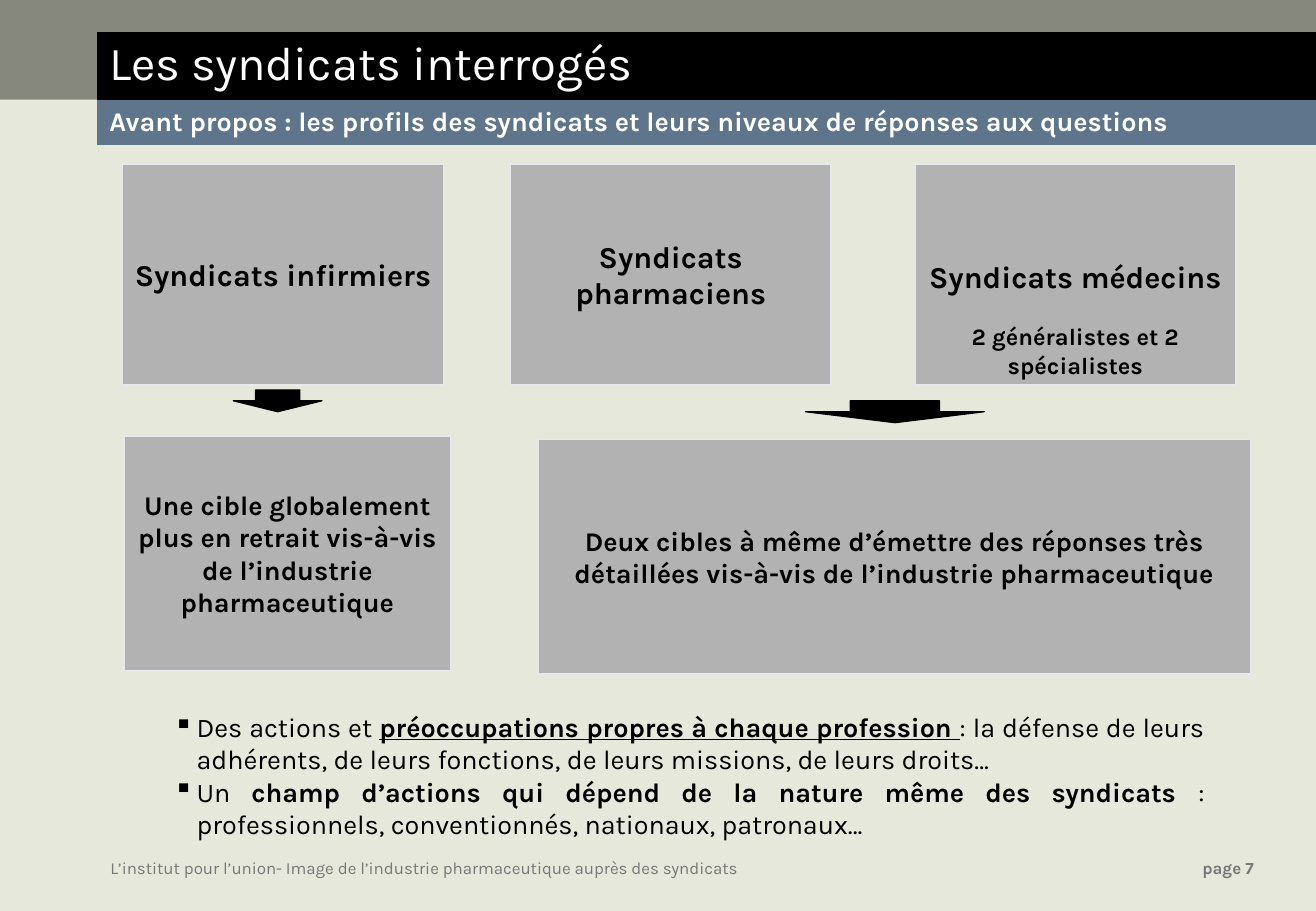
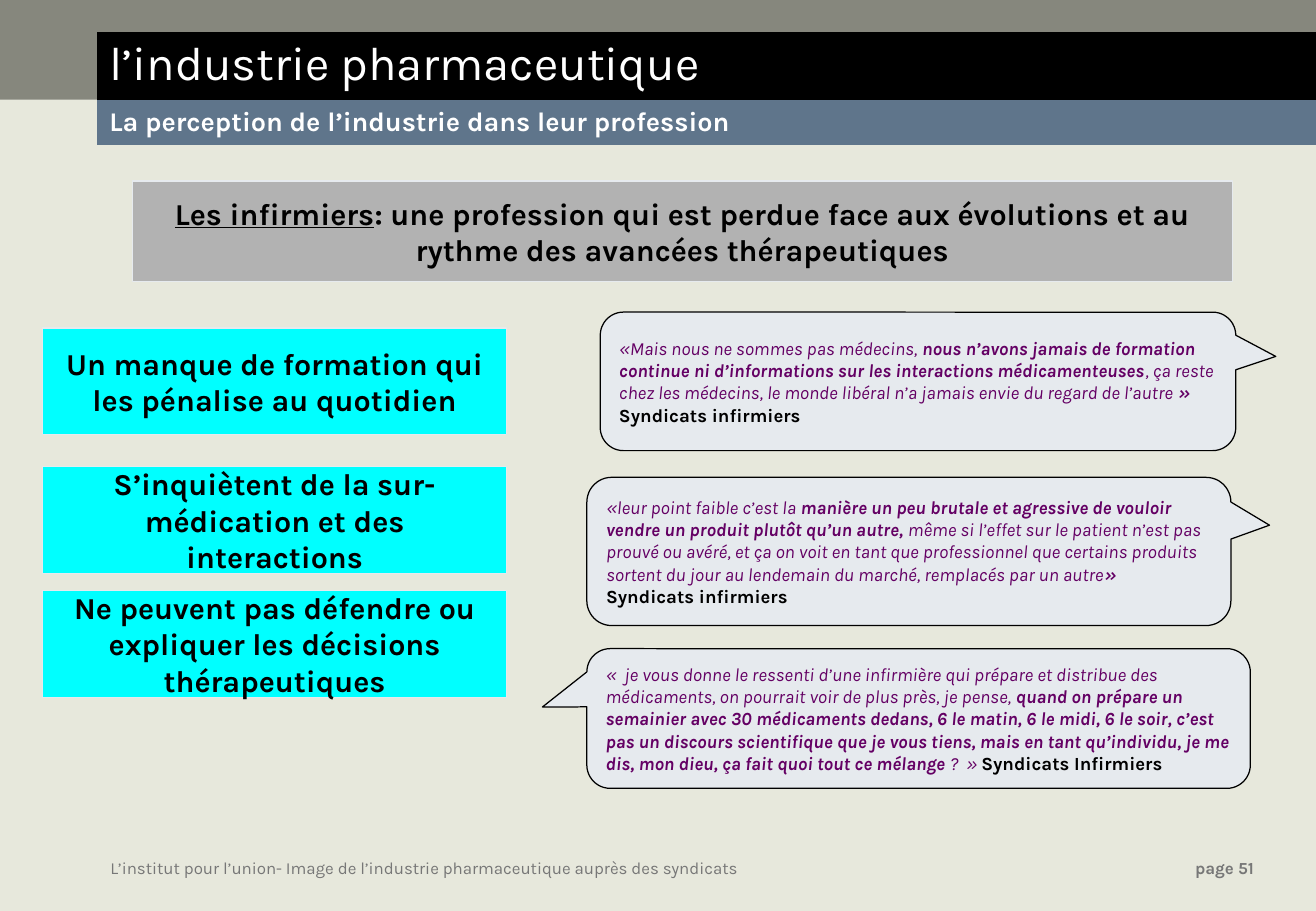
from lxml import etree
from pptx import Presentation
from pptx.dml.color import RGBColor
from pptx.enum.shapes import MSO_SHAPE
from pptx.enum.text import MSO_ANCHOR, PP_ALIGN
from pptx.oxml.ns import qn
from pptx.util import Inches, Pt

RECT, ARROW = MSO_SHAPE.RECTANGLE, MSO_SHAPE.DOWN_ARROW
BUBBLE = MSO_SHAPE.ROUNDED_RECTANGULAR_CALLOUT
LEFT, MID, JUST = PP_ALIGN.LEFT, PP_ALIGN.CENTER, PP_ALIGN.JUSTIFY
TOP, CENTER, BOTTOM = MSO_ANCHOR.TOP, MSO_ANCHOR.MIDDLE, MSO_ANCHOR.BOTTOM

FONT = "Karla"
PLAIN_TABLE = "{2D5ABB26-0587-4C30-8999-92F81FD0307C}"
COLORS = {
    "page": "E7E8DC", "band": "86877D", "black": "000000", "white": "FFFFFF",
    "blue": "5F758B", "gray": "B2B2B2", "pale": "E6EAEE", "cyan": "00FFFF",
    "plum": "640064", "note": "777777",
}
COLORS = {name: RGBColor.from_string(code) for name, code in COLORS.items()}
BOLD = {"bold": True}
UNDER = {"bold": True, "underline": True}
QUOTE = {"italic": True, "color": "plum"}
STRONG = {**QUOTE, "bold": True}


def write(frame, paras, size, color="black", align=LEFT, anchor=TOP):
    """Fill a frame with paragraphs, each a list of (text, format) runs."""
    frame.word_wrap = True
    frame.vertical_anchor = anchor
    for i, runs in enumerate(paras):
        para = frame.paragraphs[0] if i == 0 else frame.add_paragraph()
        para.alignment = align
        for text, look in runs:
            run = para.add_run()
            run.text = text
            look = {"name": FONT, "size": Pt(size), "color": color, **look}
            run.font.color.rgb = COLORS[look.pop("color")]
            for key, value in look.items():
                setattr(run.font, key, value)


def draw(slide, kind, box, fill, line=None, adjust=()):
    shape = slide.shapes.add_shape(kind, *map(Inches, box))
    shape.shadow.inherit = False
    shape.fill.solid()
    shape.fill.fore_color.rgb = COLORS[fill]
    if line:
        shape.line.color.rgb = COLORS[line]
        shape.line.width = Pt(0.75)
    else:
        shape.line.fill.background()
    for i, value in enumerate(adjust):
        shape.adjustments[i] = value
    return shape


deck = Presentation()
deck.slide_width, deck.slide_height = Inches(10.83), Inches(7.5)

# Shared frame: background, band, title table and footer
heads = [
    ("Les syndicats interrogés",
     "Avant propos : les profils des syndicats et leurs niveaux de réponses aux questions", 7),
    ("l’industrie pharmaceutique",
     "La perception de l’industrie dans leur profession", 51),
]
slides = []
for title, topic, number in heads:
    slide = deck.slides.add_slide(deck.slide_layouts[6])
    slides.append(slide)
    slide.background.fill.solid()
    slide.background.fill.fore_color.rgb = COLORS["page"]
    draw(slide, RECT, (0, 0, 10.83, 0.82), "band")

    foot = slide.shapes.add_textbox(*map(Inches, (0.81, 7.01, 10.02, 0.27))).text_frame
    write(foot, [[
        ("L’institut pour l’union- Image de l’industrie pharmaceutique auprès des syndicats\t", {}),
        (f"page {number}", BOLD)]], 10, "note")
    tabs = etree.SubElement(foot.paragraphs[0]._p.get_or_add_pPr(), qn("a:tabLst"))
    etree.SubElement(tabs, qn("a:tab"), pos=str(Inches(9.41)), algn="r")

    table = slide.shapes.add_table(2, 1, *map(Inches, (0.8, 0.26, 10.04, 0.93))).table
    table._tbl.tblPr.find(qn("a:tableStyleId")).text = PLAIN_TABLE
    rows = [(title, 0.56, 28, "black", {}), (topic, 0.37, 16, "blue", BOLD)]
    for i, (text, height, size, fill, look) in enumerate(rows):
        table.rows[i].height = Inches(height)
        cell = table.cell(i, 0)
        cell.fill.solid()
        cell.fill.fore_color.rgb = COLORS[fill]
        write(cell.text_frame, [[(text, look)]], size, "white")

unions, views = slides

# Slide 1: unions, arrows, conclusions
cards = [
    ((1.01, 1.35, 2.64, 1.82), "Syndicats infirmiers", 18),
    ((4.2, 1.35, 2.64, 1.82), "Syndicats pharmaciens", 18),
    ((1.02, 3.59, 2.69, 1.93),
     "Une cible globalement plus en retrait vis-à-vis de l’industrie pharmaceutique", 16),
    ((4.43, 3.62, 5.86, 1.93),
     "Deux cibles à même d’émettre des réponses très détaillées vis-à-vis "
     "de l’industrie pharmaceutique", 16),
]
for box, text, size in cards:
    card = draw(unions, RECT, box, "gray", "pale")
    write(card.text_frame, [[(text, BOLD)]], size, align=MID, anchor=CENTER)

card = draw(unions, RECT, (7.53, 1.35, 2.64, 1.82), "gray", "pale")
write(card.text_frame, [
    [("Syndicats médecins", BOLD)],
    [("2 généralistes et 2 spécialistes", {**BOLD, "size": Pt(14)})],
], 18, align=MID, anchor=BOTTOM)
card.text_frame.paragraphs[1].space_before = Pt(16.4)

for box in [(1.92, 3.21, 0.73, 0.18), (6.63, 3.3, 1.47, 0.18)]:
    draw(unions, ARROW, box, "black", "black")

notes = unions.shapes.add_textbox(*map(Inches, (1.33, 5.8, 8.68, 1.18))).text_frame
write(notes, [
    [("Des actions et ", {}),
     ("préoccupations propres à chaque profession ", UNDER),
     (": la défense de leurs adhérents, de leurs fonctions, de leurs missions, "
      "de leurs droits…", {})],
    [("Un ", {}),
     ("champ d’actions qui dépend de la nature même des syndicats ", BOLD),
     (": professionnels, conventionnés, nationaux, patronaux…", {})],
], 16, align=JUST)
for para in notes.paragraphs:
    props = para._p.get_or_add_pPr()
    props.set("marL", str(Inches(0.19)))
    props.set("indent", str(Inches(-0.19)))
    etree.SubElement(props, qn("a:buChar"), char="▪")

# Slide 2: headline, themes, quotes
lead = draw(views, RECT, (1.09, 1.49, 9.05, 0.83), "gray", "pale")
write(lead.text_frame, [[
    ("Les infirmiers", UNDER),
    (": une profession qui est perdue face aux évolutions et au rythme "
     "des avancées thérapeutiques", BOLD)]], 18, align=MID, anchor=CENTER)

themes = [
    (2.7, "Un manque de formation qui les pénalise au quotidien"),
    (3.84, "S’inquiètent de la sur-médication et des interactions"),
    (4.86, "Ne peuvent pas défendre ou expliquer les décisions thérapeutiques"),
]
for top, text in themes:
    theme = draw(views, RECT, (0.35, top, 3.82, 0.88), "cyan", "pale")
    write(theme.text_frame, [[(text, BOLD)]], 18, align=MID, anchor=CENTER)

quotes = [
    ((4.94, 2.57, 5.23, 1.14), (0.563, -0.18, 0.167), [[
        ("«Mais nous ne sommes pas médecins, ", QUOTE),
        ("nous n’avons jamais de formation continue ni d’informations "
         "sur les interactions médicamenteuses", STRONG),
        (", ça reste chez les médecins, le monde libéral n’a jamais envie "
         "du regard de l’autre ", QUOTE),
        ("» ", STRONG),
        ("Syndicats infirmiers", BOLD)]]),
    ((4.83, 3.93, 5.3, 1.22), (0.56, -0.177, 0.167), [
        [("«leur point faible c’est la ", QUOTE),
         ("manière un peu brutale et agressive de vouloir vendre un produit "
          "plutôt qu’un autre,", STRONG),
         (" même si l’effet sur le patient n’est pas prouvé ou avéré, et ça on voit "
          "en tant que professionnel que certains produits sortent du jour au "
          "lendemain du marché, remplacés par un autre", QUOTE),
         ("»", STRONG)],
        [("Syndicats infirmiers", BOLD)]]),
    ((4.83, 5.34, 5.46, 1.15), (-0.567, -0.082, 0.167), [[
        ("«  je vous donne le ressenti d’une infirmière qui prépare et distribue "
         "des médicaments, on pourrait voir de plus près, je pense, ", QUOTE),
        ("quand on prépare un semainier avec 30 médicaments dedans, 6 le matin, "
         "6 le midi, 6 le soir, c’est pas un discours scientifique que je vous tiens, "
         "mais en tant qu’individu, je me dis, mon dieu, ça fait quoi tout ce mélange",
         STRONG),
        (" ?  » ", QUOTE),
        ("Syndicats Infirmiers", BOLD)]]),
]
for box, adjust, paras in quotes:
    bubble = draw(views, BUBBLE, box, "pale", "black", adjust)
    write(bubble.text_frame, paras, 11, anchor=CENTER)

deck.save("out.pptx")
